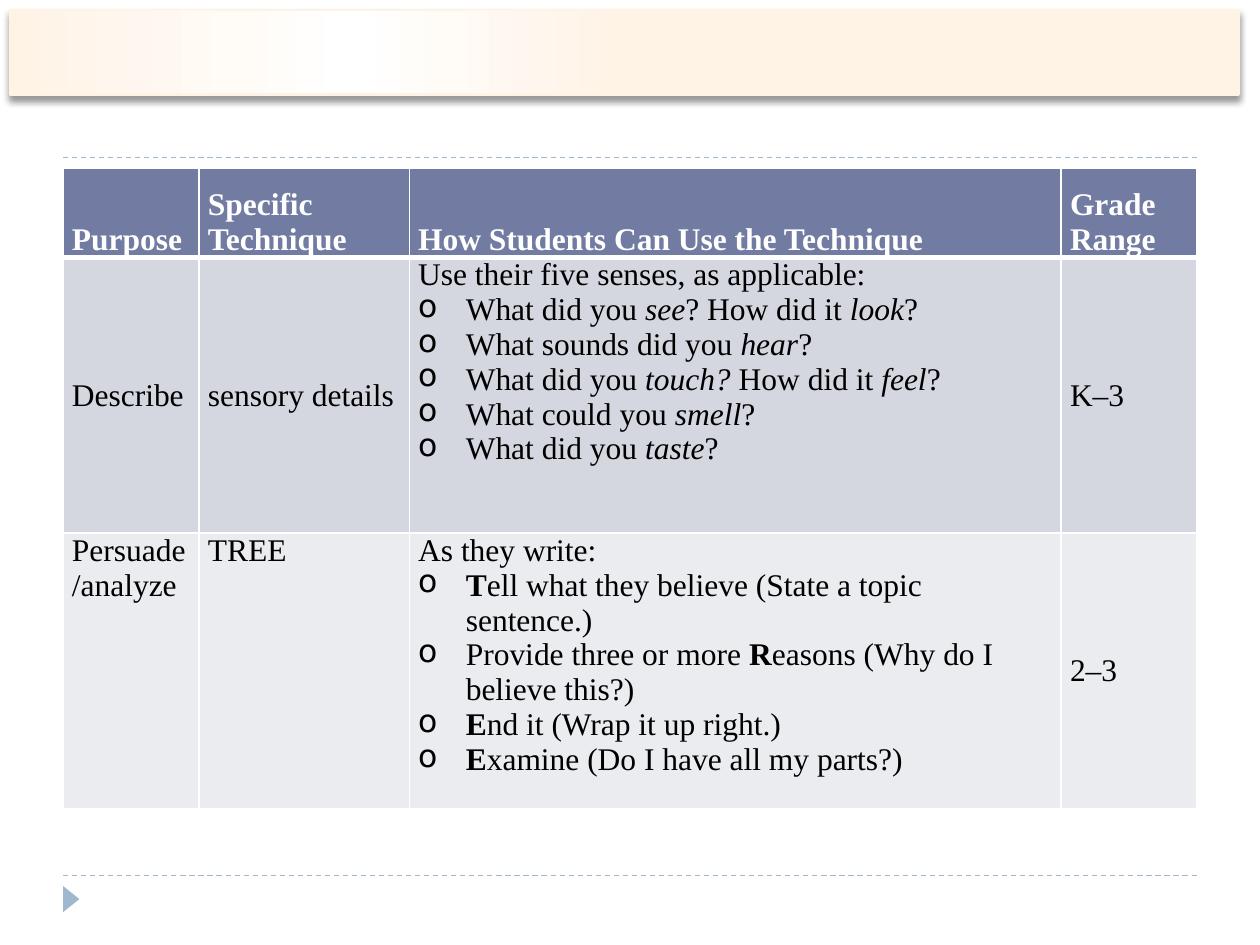
from dataclasses import dataclass

from lxml.etree import SubElement
from pptx import Presentation
from pptx.dml.color import RGBColor
from pptx.enum.dml import MSO_LINE
from pptx.enum.shapes import MSO_CONNECTOR, MSO_SHAPE
from pptx.enum.text import MSO_ANCHOR as ANCHOR, PP_ALIGN as ALIGN
from pptx.oxml import parse_xml
from pptx.oxml.ns import nsdecls, qn
from pptx.util import Cm, Pt


@dataclass(frozen=True)
class Theme:
    font: str = "Times New Roman"
    size: int = 18
    white: str = "FFFFFF"
    black: str = "000000"
    accent: str = "9FB8CD"
    cream: str = "FFF3E6"
    header: str = "727CA3"
    bands: tuple = ("D5D7E0", "EBECF0")


THEME = Theme()
COLS = (2.74, 4.24, 13.14, 2.74)
ROWS = (1.8, 5.56, 5.56)
HANG = Cm(0.96)
HEADINGS = ("Purpose", "Specific Technique",
            "How Students Can Use the Technique", "Grade Range")

# Each paragraph is a list of (text, style) runs: "b" bold, "i" italic
SENSES = [
    [("Use their five senses, as applicable:", "")],
    [("What did you ", ""), ("see", "i"), ("? How did it ", ""), ("look", "i"), ("?", "")],
    [("What sounds did you ", ""), ("hear", "i"), ("?", "")],
    [("What did you ", ""), ("touch? ", "i"), ("How did it ", ""), ("feel", "i"), ("?", "")],
    [("What could you ", ""), ("smell", "i"), ("?", "")],
    [("What did you ", ""), ("taste", "i"), ("?", "")],
]
TREE = [
    [("As they write:", "")],
    [("T", "b"), ("ell what they believe (State a topic sentence.)", "")],
    [("Provide three or more ", ""), ("R", "b"), ("easons (Why do I believe this?)", "")],
    [("E", "b"), ("nd it (Wrap it up right.)", "")],
    [("E", "b"), ("xamine (Do I have all my parts?)", "")],
]
# Purpose, technique, how to use it, grades, anchor of the first two cells
TECHNIQUES = (
    ("Describe", "sensory details", SENSES, "K–3", ANCHOR.MIDDLE),
    ("Persuade/analyze", "TREE", TREE, "2–3", ANCHOR.TOP),
)


def rgb(value):
    return RGBColor.from_string(value)


def add_rule(slide, left, top, width):
    """Dashed horizontal rule."""
    line = slide.shapes.add_connector(
        MSO_CONNECTOR.STRAIGHT, Cm(left), Cm(top), Cm(left + width), Cm(top))
    line.line.color.rgb = rgb(THEME.accent)
    line.line.width = Pt(0.75)
    line.line.dash_style = MSO_LINE.DASH
    SubElement(line._element.spPr, qn("a:effectLst"))


def add_banner(slide, left, top, width, height):
    """Cream bar with a pale highlight and a soft shadow."""
    sp = slide.shapes.add_shape(MSO_SHAPE.FLOWCHART_PROCESS,
                                Cm(left), Cm(top), Cm(width), Cm(height))
    sp.line.color.rgb = rgb(THEME.cream)
    sp.line.width = Pt(1.5)
    stops = ((50, THEME.cream), (72, THEME.white), (100, THEME.cream))
    gs = "".join(f'<a:gs pos="{pos * 1000}"><a:srgbClr val="{color}"/></a:gs>'
                 for pos, color in stops)
    props = sp._element.spPr
    props.find(qn("a:ln")).addprevious(parse_xml(
        f'<a:gradFill {nsdecls("a")} rotWithShape="1"><a:gsLst>{gs}</a:gsLst>'
        '<a:lin ang="10800000" scaled="0"/></a:gradFill>'))
    props.append(parse_xml(
        f'<a:effectLst {nsdecls("a")}><a:outerShdw blurRad="{Pt(4)}" dist="{Pt(3)}" '
        f'dir="5400000" rotWithShape="0"><a:srgbClr val="{THEME.black}">'
        '<a:alpha val="40000"/></a:srgbClr></a:outerShdw></a:effectLst>'))


def add_footer(slide, left, top, width):
    """Rule with a small arrowhead marker under its left end."""
    add_rule(slide, left, top, width)
    sp = slide.shapes.add_shape(MSO_SHAPE.ISOSCELES_TRIANGLE,
                                Cm(left - 0.1), Cm(top + 0.31), Cm(0.53), Cm(0.33))
    sp.rotation = 90
    sp.fill.solid()
    sp.fill.fore_color.rgb = rgb(THEME.accent)
    sp.line.fill.background()
    sp.shadow.inherit = False


def set_borders(cell, top, bottom):
    """White borders; top and bottom widths in points."""
    widths = {"lnL": 1, "lnR": 1, "lnT": top, "lnB": bottom}
    for i, (side, width) in enumerate(widths.items()):
        cell._tc.get_or_add_tcPr().insert(i, parse_xml(
            f'<a:{side} {nsdecls("a")} w="{Pt(width)}"><a:solidFill>'
            f'<a:srgbClr val="{THEME.white}"/></a:solidFill></a:{side}>'))


def set_hanging(p, bullet):
    props = p._p.get_or_add_pPr()
    props.set("marL", str(HANG))
    props.set("indent", str(-HANG))
    if bullet:
        SubElement(props, qn("a:buChar")).set("char", "o")


def fill_cell(cell, content, fill, color, anchor, bold=False, align=ALIGN.LEFT):
    """Format one cell; a list as content becomes a lead line with bullets."""
    cell.fill.solid()
    cell.fill.fore_color.rgb = rgb(fill)
    cell.vertical_anchor = anchor
    cell.margin_left = cell.margin_right = Cm(0.18)
    cell.margin_top = cell.margin_bottom = 0
    is_list = isinstance(content, list)
    tf = cell.text_frame
    for i, runs in enumerate(content if is_list else [[(content, "")]]):
        p = tf.add_paragraph() if i else tf.paragraphs[0]
        p.alignment = align
        if is_list:
            set_hanging(p, bullet=i > 0)
        for text, style in runs:
            r = p.add_run()
            r.text = text
            r.font.name = THEME.font
            r.font.size = Pt(THEME.size)
            r.font.color.rgb = rgb(color)
            r.font.bold = bold or style == "b"
            r.font.italic = style == "i"


def add_technique_table(slide, left, top):
    table = slide.shapes.add_table(len(ROWS), len(COLS), Cm(left), Cm(top),
                                   Cm(sum(COLS)), Cm(sum(ROWS))).table
    table.first_row = table.horz_banding = False
    for column, width in zip(table.columns, COLS):
        column.width = Cm(width)
    for row, height in zip(table.rows, ROWS):
        row.height = Cm(height)

    # Header row
    for c, heading in enumerate(HEADINGS):
        cell = table.cell(0, c)
        fill_cell(cell, heading, THEME.header, THEME.white, ANCHOR.BOTTOM, bold=True,
                  align=ALIGN.LEFT if c == 2 else ALIGN.JUSTIFY)
        set_borders(cell, top=1, bottom=3)

    # Technique rows
    for r, (*contents, anchor) in enumerate(TECHNIQUES, 1):
        anchors = (anchor, anchor, ANCHOR.TOP, ANCHOR.MIDDLE)
        for c, content in enumerate(contents):
            cell = table.cell(r, c)
            fill_cell(cell, content, THEME.bands[r - 1], THEME.black, anchors[c])
            set_borders(cell, top=3 if r == 1 else 1, bottom=1)


def main():
    prs = Presentation()
    prs.slide_width, prs.slide_height = Cm(25.4), Cm(19.05)
    slide = prs.slides.add_slide(prs.slide_layouts[6])
    left, width = 1.27, sum(COLS)
    add_footer(slide, left, 17.65, width)
    add_rule(slide, left, 3.17, width)
    add_banner(slide, 0.2, 0.2, 24.77, 1.7)
    add_technique_table(slide, left, 3.39)
    prs.save("out.pptx")


if __name__ == "__main__":
    main()
